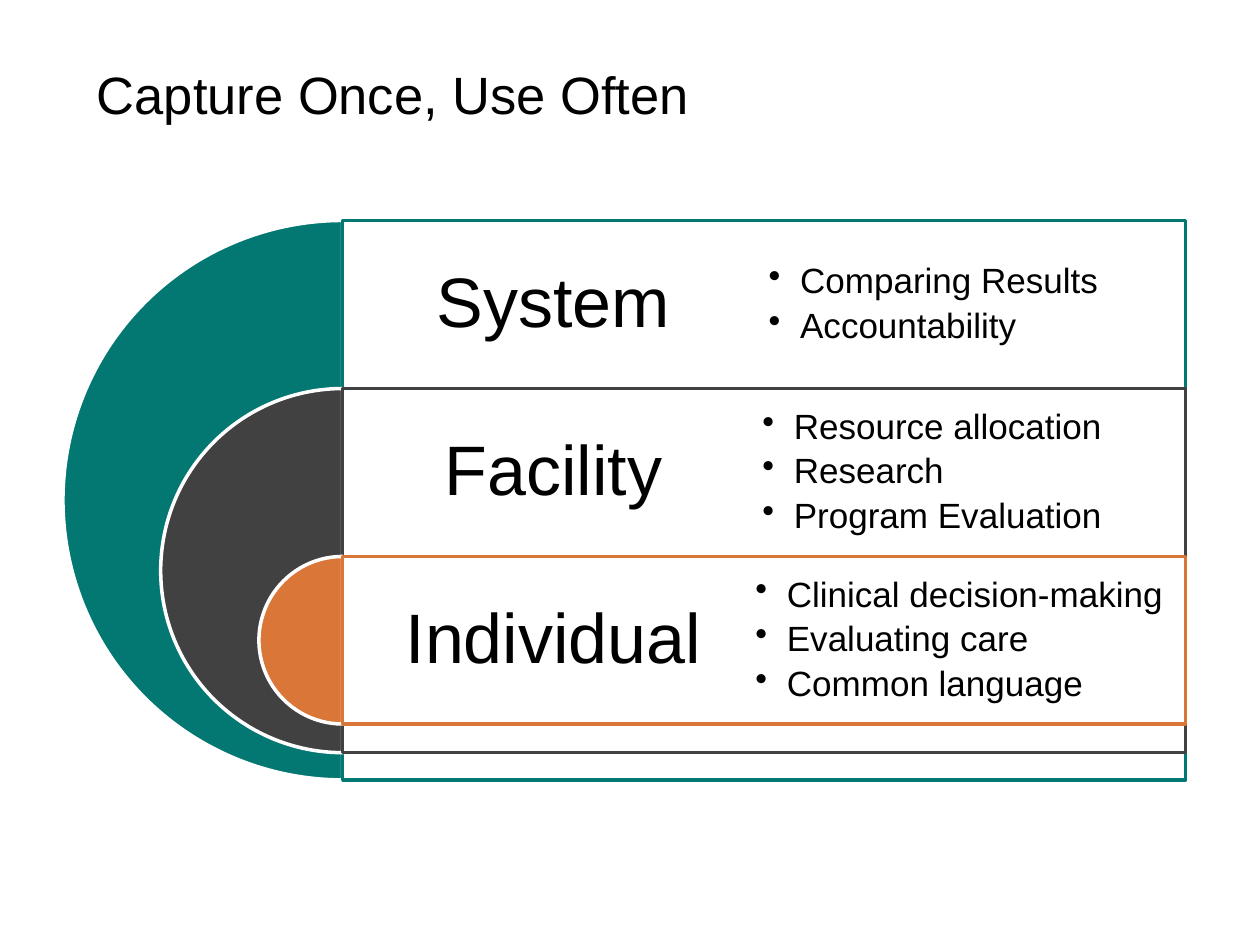
from dataclasses import dataclass
from lxml.etree import SubElement
from pptx import Presentation
from pptx.dml.color import RGBColor as Rgb
from pptx.enum.shapes import MSO_SHAPE as Shape
from pptx.enum.text import MSO_ANCHOR as Anchor, PP_ALIGN as Align
from pptx.oxml.ns import qn
from pptx.util import Inches, Pt


@dataclass(frozen=True)
class Theme:
    font: str = "Arial"
    ink: str = "000000"
    paper: str = "FFFFFF"
    teal: str = "037872"
    gray: str = "414141"
    rust: str = "DA7637"
    title: int = 30
    label: int = 40
    item: int = 20
    line: int = 2


THEME = Theme()
TOP, ROW = 1.75, 4 / 3
AXIS, WIDE = 2.72, 6.69
MID = 7.74

LEVELS = [
    ("System", THEME.teal, 4.44, 3.82,
     ["Comparing Results", "Accountability"]),
    ("Facility", THEME.gray, 2.89, 3.92,
     ["Resource allocation", "Research", "Program Evaluation"]),
    ("Individual", THEME.rust, 1.33, 4.03,
     ["Clinical decision-making", "Evaluating care", "Common language"]),
]


def add_form(slide, kind, box, fill, line):
    form = slide.shapes.add_shape(kind, *map(Inches, box))
    form.shadow.inherit = False
    form.fill.solid()
    form.fill.fore_color.rgb = Rgb.from_string(fill)
    form.line.color.rgb = Rgb.from_string(line)
    form.line.width = Pt(THEME.line)
    return form


def add_pie(slide, top, size, color):
    box = (AXIS - size / 2, top, size, size)
    pie = add_form(slide, Shape.PIE, box, color, THEME.paper)
    pie.adjustments[0] = 54
    pie.adjustments[1] = 162


def add_panel(slide, top, tall, color):
    box = (AXIS, top, WIDE, tall)
    panel = add_form(slide, Shape.RECTANGLE, box, THEME.paper, color)
    tint = panel.fill._xPr.find(qn("a:solidFill"))[0]
    SubElement(tint, qn("a:alpha"), val="90000")


def add_bullet(par):
    par.level = 1
    props = par._p.get_or_add_pPr()
    props.set("marL", str(Inches(0.25)))
    props.set("indent", str(Inches(-0.25)))
    SubElement(props, qn("a:buChar"), char="•")
    par.space_after = Pt(4)


def add_text(slide, box, lines, size, pad, align=Align.LEFT,
             gap=0.9, bullet=False):
    frame = slide.shapes.add_textbox(*map(Inches, box)).text_frame
    frame.word_wrap = True
    frame.vertical_anchor = Anchor.MIDDLE
    frame.margin_left = frame.margin_right = Inches(pad)
    frame.margin_top = frame.margin_bottom = Inches(pad)
    frame.text = "\n".join(lines)
    for par in frame.paragraphs:
        if bullet:
            add_bullet(par)
        par.alignment = align
        par.line_spacing = gap
        par.font.name = THEME.font
        par.font.size = Pt(size)
        par.font.color.rgb = Rgb.from_string(THEME.ink)


def main():
    deck = Presentation()
    deck.slide_width, deck.slide_height = Inches(10), Inches(7.5)
    slide = deck.slides.add_slide(deck.slide_layouts[6])

    add_text(slide, (0.67, 0.33, 8.35, 0.83), ["Capture Once, Use Often"],
             THEME.title, 0.1, gap=1.0)
    for row, (name, color, size, wide, items) in enumerate(LEVELS):
        top = TOP + row * ROW
        add_pie(slide, top, size, color)
        add_panel(slide, top, size, color)
        add_text(slide, (AXIS, top, WIDE / 2, ROW), [name],
                 THEME.label, 0.17, Align.CENTER)
        add_text(slide, (MID - wide / 2, top, wide, ROW), items,
                 THEME.item, 0.27, bullet=True)

    deck.save("out.pptx")


if __name__ == "__main__":
    main()
